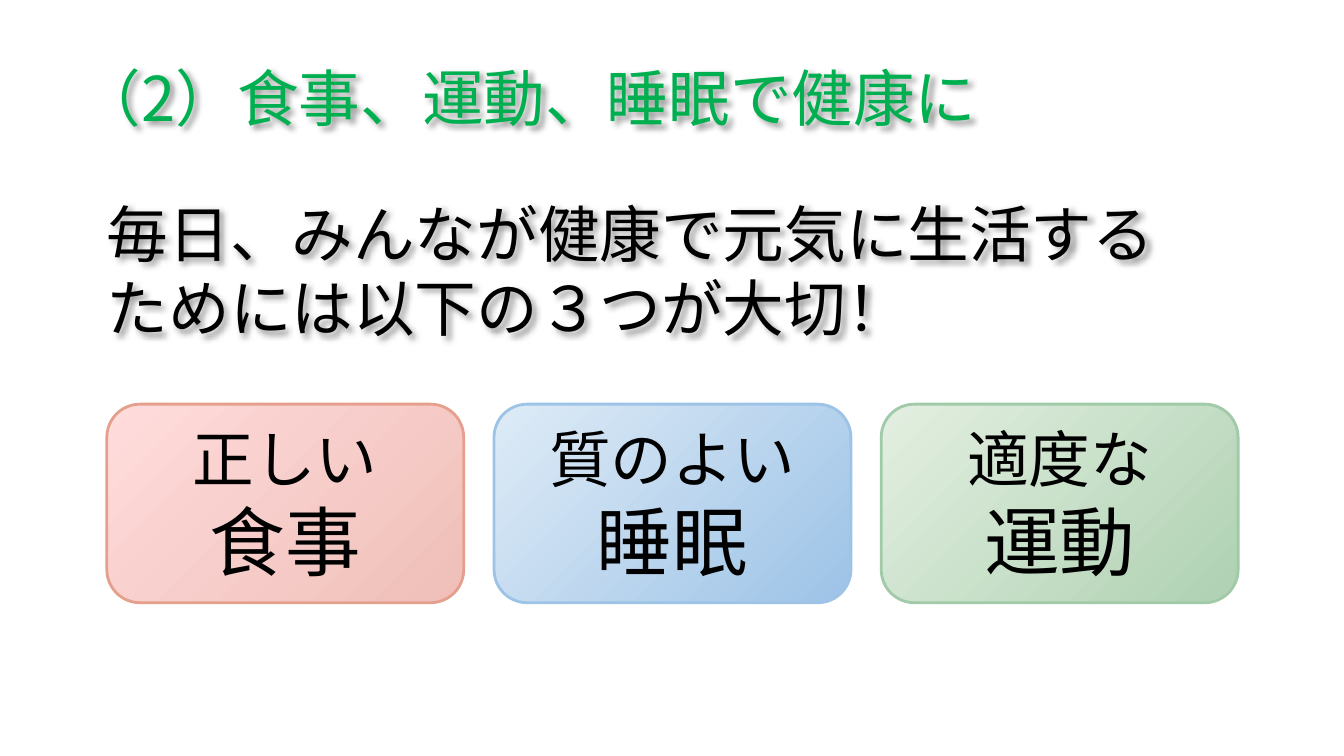
from lxml.etree import SubElement
from pptx import Presentation
from pptx.dml.color import RGBColor
from pptx.enum.shapes import MSO_SHAPE
from pptx.enum.text import MSO_ANCHOR, MSO_AUTO_SIZE, PP_ALIGN
from pptx.oxml.ns import qn
from pptx.util import Inches, Pt

FONT = "Noto Sans CJK JP"
BLACK = RGBColor(0x00, 0x00, 0x00)
GREEN = RGBColor(0x00, 0xB0, 0x50)
ROSE = (RGBColor(0xEF, 0xBF, 0xB8), RGBColor(0xFF, 0xDC, 0xDC), RGBColor(0xE5, 0xA0, 0x8D))
BLUE = (RGBColor(0x9D, 0xC3, 0xE6), RGBColor(0xDE, 0xEB, 0xF7), RGBColor(0x9D, 0xC3, 0xE6))
LEAF = (RGBColor(0xAF, 0xD1, 0xB2), RGBColor(0xE3, 0xEF, 0xE1), RGBColor(0xA0, 0xCA, 0xA8))

# Card grid, in inches
LEFT, TOP, STEP = 1.06, 4.01, 3.84
WIDE, HIGH = 3.54, 1.97
BODY, LARGE = 44, 54


class Board:
    """Holds the text style and the current slide."""

    def __init__(self, deck):
        self.slide = deck.slides.add_slide(deck.slide_layouts[6])

    def put(self, frame, paras, color, align):
        """Each paragraph is a list of (text, size) runs."""
        frame.word_wrap = True
        for i, runs in enumerate(paras):
            para = frame.paragraphs[0] if i == 0 else frame.add_paragraph()
            para.alignment = align
            for text, size in runs:
                run = para.add_run()
                run.text = text
                run.font.size = Pt(size)
                run.font.name = FONT
                run.font.color.rgb = color
                SubElement(run.font._element, qn("a:ea"), typeface=FONT)

    def glow(self, box):
        """Soft shadow behind the letters."""
        effects = SubElement(box._element.spPr, qn("a:effectLst"))
        shade = SubElement(effects, qn("a:outerShdw"), blurRad="50800",
                           dist="38100", dir="2700000", algn="tl")
        tone = SubElement(shade, qn("a:srgbClr"), val="000000")
        SubElement(tone, qn("a:alpha"), val="40000")

    def text(self, x, y, w, h, lines, color):
        box = self.slide.shapes.add_textbox(Inches(x), Inches(y), Inches(w), Inches(h))
        frame = box.text_frame
        frame.margin_left = frame.margin_right = 0
        frame.margin_top = frame.margin_bottom = 0
        self.put(frame, [[(line, BODY)] for line in lines], color, PP_ALIGN.LEFT)
        frame.auto_size = MSO_AUTO_SIZE.SHAPE_TO_FIT_TEXT
        self.glow(box)

    def card(self, col, paras, tones):
        dark, light, edge = tones
        card = self.slide.shapes.add_shape(
            MSO_SHAPE.ROUNDED_RECTANGLE, Inches(LEFT + col * STEP), Inches(TOP),
            Inches(WIDE), Inches(HIGH))
        card.shadow.inherit = False
        card.fill.gradient()
        card.fill.gradient_angle = 135
        for stop, tone in zip(card.fill.gradient_stops, (dark, light)):
            stop.color.rgb = tone
        card.line.color.rgb = edge
        card.line.width = Pt(2)
        card.text_frame.vertical_anchor = MSO_ANCHOR.MIDDLE
        self.put(card.text_frame, paras, BLACK, PP_ALIGN.CENTER)


def main():
    deck = Presentation()
    deck.slide_width, deck.slide_height = Inches(13.33), Inches(7.5)
    board = Board(deck)

    # Heading and message
    board.text(0.79, 0.59, 11.81, 0.74, ["（2）食事、運動、睡眠で健康に"], GREEN)
    board.text(LEFT, 1.94, 11.42, 1.48,
               ["毎日、みんなが健康で元気に生活する", "ためには以下の３つが大切！"], BLACK)

    # Three keys to health; the middle one wraps by itself
    cards = [
        ([[("正しい", BODY)], [("食事", LARGE)]], ROSE),
        ([[("質のよい", BODY), ("睡眠", LARGE)]], BLUE),
        ([[("適度な", BODY)], [("運動", LARGE)]], LEAF),
    ]
    for col, (paras, tones) in enumerate(cards):
        board.card(col, paras, tones)

    deck.save("out.pptx")


if __name__ == "__main__":
    main()
